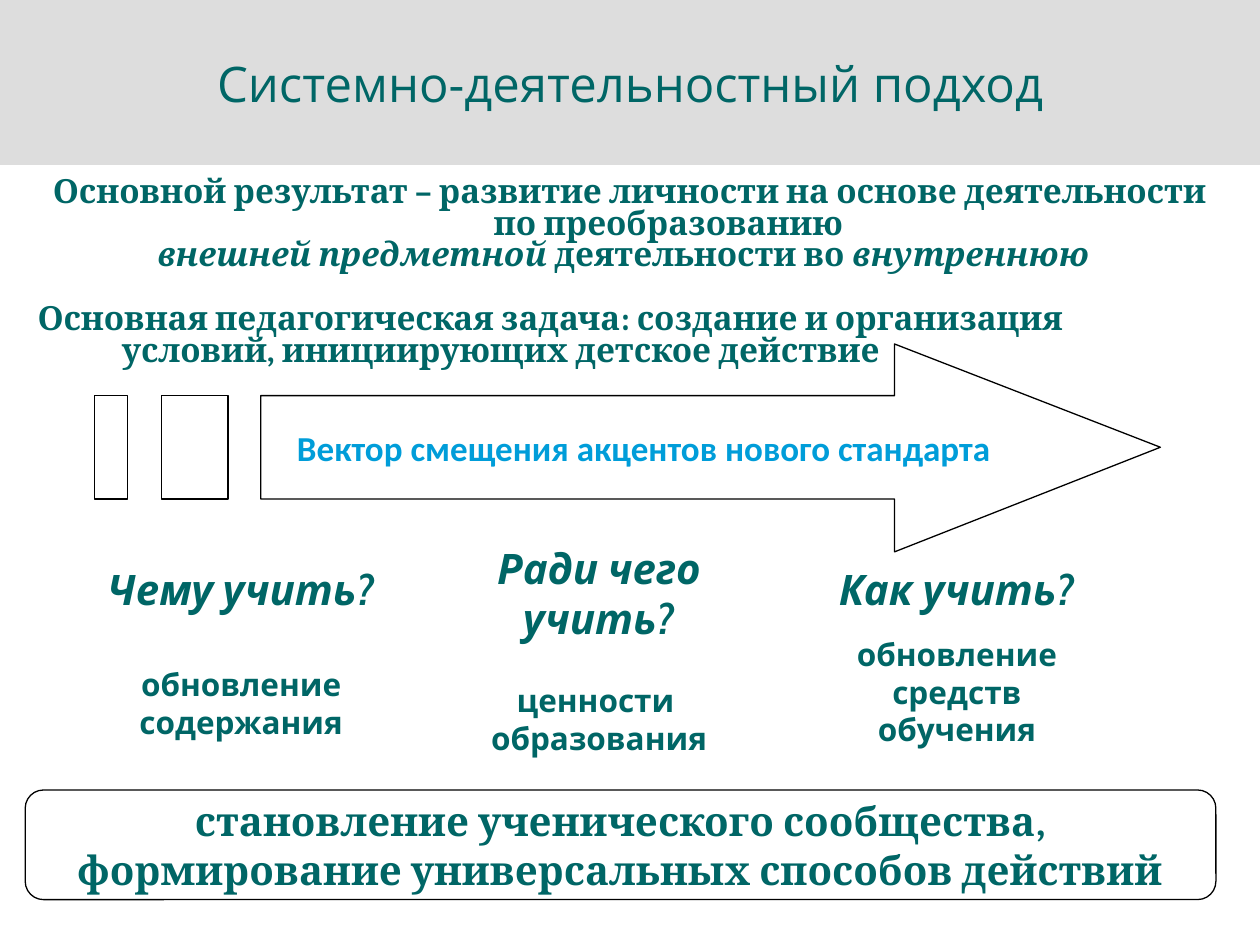
import pptx
import pptx.util
import pptx.dml.color
import pptx.enum.shapes
import pptx.enum.text

Inches = pptx.util.Inches
Pt = pptx.util.Pt
Kind = pptx.enum.shapes.MSO_SHAPE
Align = pptx.enum.text.PP_ALIGN
Anchor = pptx.enum.text.MSO_ANCHOR

TEAL = "006666"
HEAD = {"name": "Open Sans", "size": Pt(28)}
BODY = {"name": "Cambria", "size": Pt(19), "bold": True}
VECTOR = {"name": "Calibri", "size": Pt(20), "bold": True}
ASK = {"name": "Cabin", "size": Pt(24), "bold": True, "italic": True}
REPLY = {**ASK, "size": Pt(18), "italic": False}
GOAL = {**BODY, "size": Pt(23)}
SLANT = {**BODY, "italic": True}


def color(code):
    return pptx.dml.color.RGBColor.from_string(code)


def apply(item, style):
    for name, value in style.items():
        setattr(item, name, value)


def paint(shape, fill, line=None):
    shape.shadow.inherit = False
    shape.fill.solid()
    shape.fill.fore_color.rgb = color(fill)
    if line:
        shape.line.color.rgb = color(line)
        shape.line.width = Pt(0.75)
    else:
        shape.line.fill.background()


def write(frame, rows, tone=TEAL):
    for num, (runs, style) in enumerate(rows):
        para = frame.paragraphs[0] if num == 0 else frame.add_paragraph()
        apply(para, {"alignment": Align.CENTER, **style})
        for text, font in runs:
            run = para.add_run()
            run.text = text
            apply(run.font, font)
            run.font.color.rgb = color(tone)


def center(frame, rows, tone=TEAL):
    apply(frame, {"word_wrap": False, "vertical_anchor": Anchor.MIDDLE})
    write(frame, rows, tone)


def block(slide, kind, box, fill, rows, line=None):
    shape = slide.shapes.add_shape(kind, *map(Inches, box))
    paint(shape, fill, line)
    center(shape.text_frame, rows)
    return shape


def arrow(slide):
    top, base = 314, 396
    head = [(710, 273), (710, top), (207, top), (207, base),
            (710, base), (710, 438), (921, 355)]
    pen = slide.shapes.build_freeform(*head[0], scale=Inches(0.01))
    pen.add_line_segments(head[1:], close=True)
    for left, right in ((128, 181), (75, 101)):
        pen.move_to(left, top)
        pen.add_line_segments([(left, base), (right, base), (right, top)], close=True)
    shape = pen.convert_to_shape()
    paint(shape, "FFFFFF", "000000")
    shape.text_frame.margin_left = Inches(0.36)
    text = "Вектор смещения акцентов нового стандарта"
    center(shape.text_frame, [([(text, VECTOR)], {})], "009DD9")


def indent(para, left, first):
    props = para._p.get_or_add_pPr()
    props.set("marL", str(Inches(left)))
    props.set("indent", str(Inches(first)))


def body(slide):
    frame = slide.shapes.add_textbox(*map(Inches, (0.2, 1.41, 9.6, 1.6))).text_frame
    apply(frame, {"word_wrap": True, "margin_top": 0})
    tight = {"line_spacing": 0.8}
    left = {**tight, "alignment": Align.LEFT}
    write(frame, [
        ([("Основной результат – развитие личности на основе деятельности "
           "по преобразованию ", BODY)], tight),
        ([("внешней предметной ", SLANT), ("деятельности во ", BODY),
          ("внутреннюю", SLANT)], left),
        ([("Основная педагогическая задача: создание и организация "
           "условий, инициирующих детское действие", BODY)],
         {**left, "space_before": Pt(18.3)}),
    ])
    for para, sizes in zip(frame.paragraphs, ((0.67, -0.67), (0.95, 0), (0.67, -0.67))):
        indent(para, *sizes)


def topic(slide, box, ask, reply, gap, low):
    rows = [([(text, ASK)], {}) for text in ask]
    rows += [([(text, REPLY)], {}) for text in reply]
    rows[len(ask)][1]["space_before"] = Pt(gap)
    shape = block(slide, Kind.OVAL, box, "FFFFFF", rows)
    shape.text_frame.margin_bottom = Inches(low)


def main():
    deck = pptx.Presentation()
    apply(deck, {"slide_width": Inches(10), "slide_height": Inches(7.5)})
    slide = deck.slides.add_slide(deck.slide_layouts[6])
    block(slide, Kind.RECTANGLE, (0, 0, 10, 1.31), "DDDDDD",
          [([("Системно-деятельностный подход", HEAD)], {})])
    body(slide)
    arrow(slide)
    topics = [
        ((0.9, 4.14, 2.03, 2.2), ["Чему учить?"],
         ["обновление", "содержания"], 29, 0.18),
        ((3.74, 4.06, 2.03, 2.32), ["Ради чего", "учить?"],
         ["ценности ", "образования"], 21.8, 0.18),
        ((6.65, 4.3, 1.89, 1.81), ["Как учить?"],
         ["обновление", "средств", "обучения"], 12, 0.05),
    ]
    for item in topics:
        topic(slide, *item)
    goals = ["становление ученического сообщества,",
             "формирование универсальных способов действий"]
    block(slide, Kind.ROUNDED_RECTANGLE, (0.2, 6.27, 9.45, 0.87), "FFFFFF",
          [([(text, GOAL)], {}) for text in goals], "000000")
    deck.save("out.pptx")


if __name__ == "__main__":
    main()
